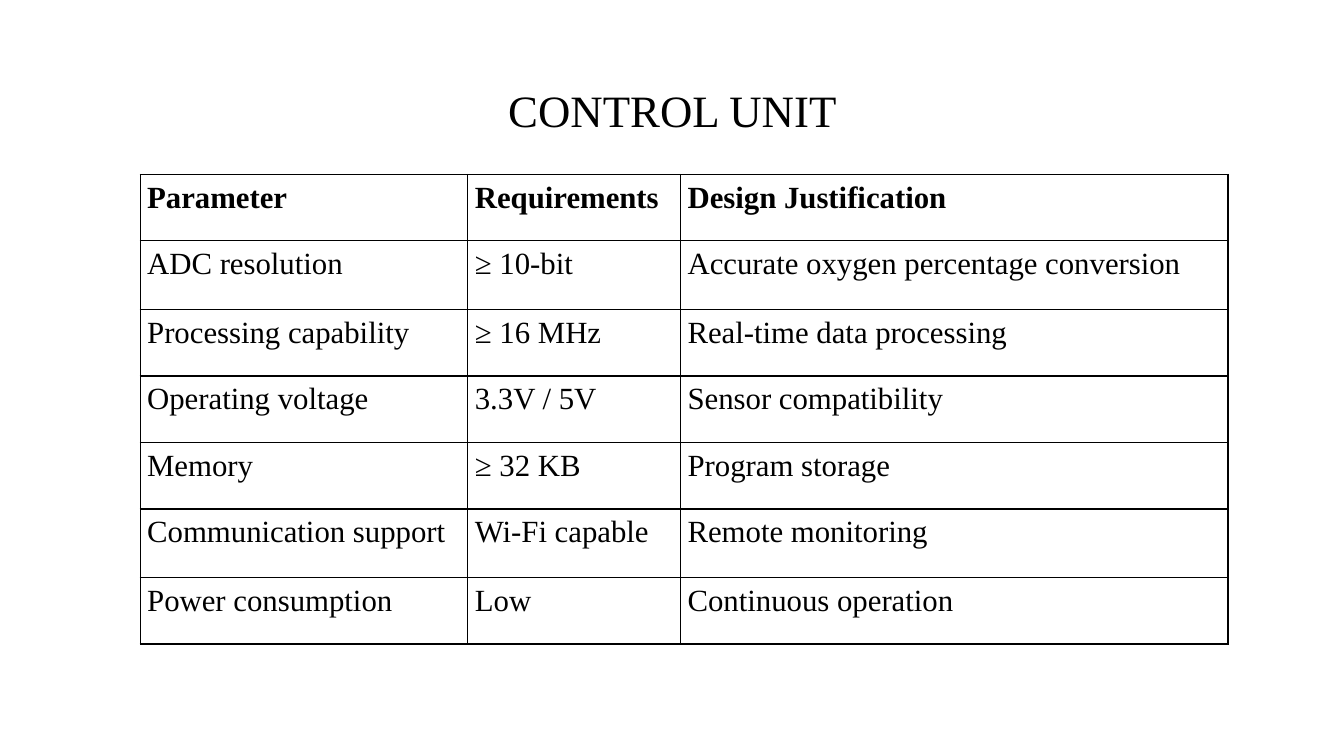
from lxml.etree import SubElement
from pptx import Presentation
from pptx.dml.color import RGBColor
from pptx.enum.text import MSO_ANCHOR, PP_ALIGN
from pptx.oxml.ns import qn
from pptx.util import Inches, Pt

TITLE = "CONTROL UNIT"
ROWS = [
    ("Parameter", "Requirements", "Design Justification"),
    ("ADC resolution", "≥ 10-bit", "Accurate oxygen percentage conversion"),
    ("Processing capability", "≥ 16 MHz", "Real-time data processing"),
    ("Operating voltage", "3.3V / 5V", "Sensor compatibility"),
    ("Memory", "≥ 32 KB", "Program storage"),
    ("Communication support", "Wi-Fi capable", "Remote monitoring"),
    ("Power consumption", "Low", "Continuous operation"),
]
COL_WIDTHS = [3.25, 2.11, 5.43]
ROW_HEIGHTS = [0.66, 0.68, 0.66, 0.66, 0.66, 0.68, 0.66]
BLACK = RGBColor(0, 0, 0)
FONT = "Times New Roman"


def set_font(p, size, bold=False):
    p.font.name = FONT
    p.font.size = Pt(size)
    p.font.bold = bold
    p.font.color.rgb = BLACK


def add_borders(cell):
    tc_pr = cell._tc.get_or_add_tcPr()
    for side in ("lnL", "lnR", "lnT", "lnB"):
        line = SubElement(tc_pr, qn(f"a:{side}"), w=str(Pt(1)))
        fill = SubElement(line, qn("a:solidFill"))
        SubElement(fill, qn("a:srgbClr"), val=str(BLACK))


def add_title(s):
    title = s.shapes.title
    title.left, title.top = Inches(0.92), Inches(0.4)
    title.width, title.height = Inches(11.5), Inches(1.45)
    tf = title.text_frame
    tf.text = TITLE
    tf.vertical_anchor = MSO_ANCHOR.MIDDLE
    p = tf.paragraphs[0]
    p.alignment = PP_ALIGN.CENTER
    p.line_spacing = 0.9
    set_font(p, 32)


def fill_cell(cell, text, bold):
    cell.margin_left, cell.margin_right = Inches(0.07), Inches(0.08)
    cell.margin_top, cell.margin_bottom = Inches(0.04), Inches(0)
    add_borders(cell)
    cell.fill.background()
    cell.text = text
    p = cell.text_frame.paragraphs[0]
    p.line_spacing = 1.07
    p.space_after = Pt(10.8)
    set_font(p, 22, bold)


def add_requirements(s):
    table = s.shapes.add_table(
        len(ROWS), len(COL_WIDTHS), Inches(1.39), Inches(1.73),
        Inches(sum(COL_WIDTHS)), Inches(sum(ROW_HEIGHTS))).table
    table.horz_banding = False
    for col, width in zip(table.columns, COL_WIDTHS):
        col.width = Inches(width)
    for i, (row, height) in enumerate(zip(table.rows, ROW_HEIGHTS)):
        row.height = Inches(height)
        for cell, text in zip(row.cells, ROWS[i]):
            fill_cell(cell, text, bold=i == 0)


def main():
    """Build the control unit requirements slide."""
    prs = Presentation()
    prs.slide_width, prs.slide_height = Inches(13.33), Inches(7.5)
    s = prs.slides.add_slide(prs.slide_layouts[5])
    add_title(s)
    add_requirements(s)
    prs.save("out.pptx")


if __name__ == "__main__":
    main()
